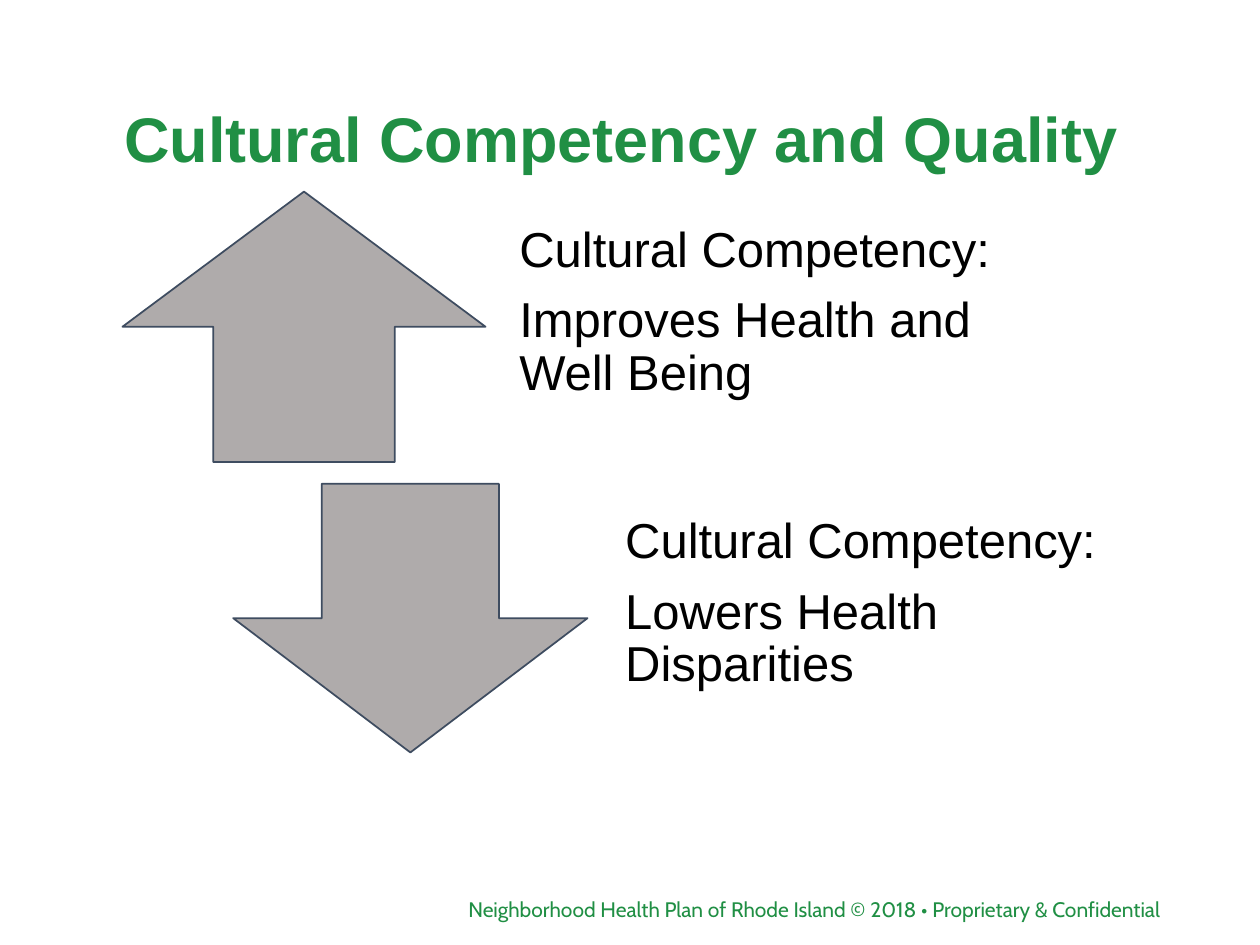
from pptx import Presentation
from pptx.dml.color import RGBColor
from pptx.enum.shapes import MSO_SHAPE as Shape
from pptx.enum.text import MSO_ANCHOR as Anchor, PP_ALIGN as Align
from pptx.util import Pt

GREEN = RGBColor(0x20, 0x8F, 0x44)
GRAY = RGBColor(0xAF, 0xAB, 0xAB)
SLATE = RGBColor(0x3E, 0x4C, 0x60)
BLACK = RGBColor(0, 0, 0)
WHITE = RGBColor(0xFF, 0xFF, 0xFF)

TITLE = "Cultural Competency and Quality "
FOOTER = "Neighborhood Health Plan of Rhode Island © 2018 • Proprietary & Confidential"
EFFECTS = [
    (Shape.UP_ARROW, (70, 109.5, 207.5, 154.5), (281, 110, 342.5, 153.5),
     ["Cultural Competency:", "Improves Health and Well Being"]),
    (Shape.DOWN_ARROW, (133.25, 276.5, 202.5, 153.5), (341.5, 276.5, 342.5, 153.5),
     ["Cultural Competency:", "Lowers Health Disparities"]),
]
TEXT_INSETS = (15.8, 0, 15.8, 15.8)
DEFAULT_INSETS = (7.2, 3.6, 7.2, 3.6)


def add_text(page, place, lines, size, color, font="Arial", bold=False,
             align=Align.LEFT, spacing=0.9, after=0, insets=DEFAULT_INSETS):
    box = page.shapes.add_textbox(*map(Pt, place))
    frame = box.text_frame
    frame.word_wrap = True
    frame.vertical_anchor = Anchor.MIDDLE
    (frame.margin_left, frame.margin_top,
     frame.margin_right, frame.margin_bottom) = map(Pt, insets)
    for index, line in enumerate(lines):
        para = frame.add_paragraph() if index else frame.paragraphs[0]
        para.alignment = align
        para.line_spacing = spacing
        para.space_after = Pt(after)
        span = para.add_run()
        span.text = line
        span.font.name = font
        span.font.size = Pt(size)
        span.font.bold = bold
        span.font.color.rgb = color


def add_arrow(page, kind, place):
    arrow = page.shapes.add_shape(kind, *map(Pt, place))
    arrow.shadow.inherit = False
    arrow.fill.solid()
    arrow.fill.fore_color.rgb = GRAY
    arrow.line.color.rgb = SLATE
    arrow.line.width = Pt(1)


def main():
    deck = Presentation()
    deck.slide_width, deck.slide_height = Pt(720), Pt(540)
    page = deck.slides.add_slide(deck.slide_layouts[6])
    page.background.fill.solid()
    page.background.fill.fore_color.rgb = WHITE
    add_text(page, (49.5, 29, 621, 104), [TITLE], 36, GREEN, bold=True,
             align=Align.CENTER)
    for kind, arrow_place, text_place, lines in EFFECTS:
        add_arrow(page, kind, arrow_place)
        add_text(page, text_place, lines, 28, BLACK, after=10, insets=TEXT_INSETS)
    add_text(page, (238.5, 510, 432, 19.5), [FOOTER], 12, GREEN, font="Cabin",
             align=Align.RIGHT, spacing=1.0)
    deck.save("out.pptx")


if __name__ == "__main__":
    main()
